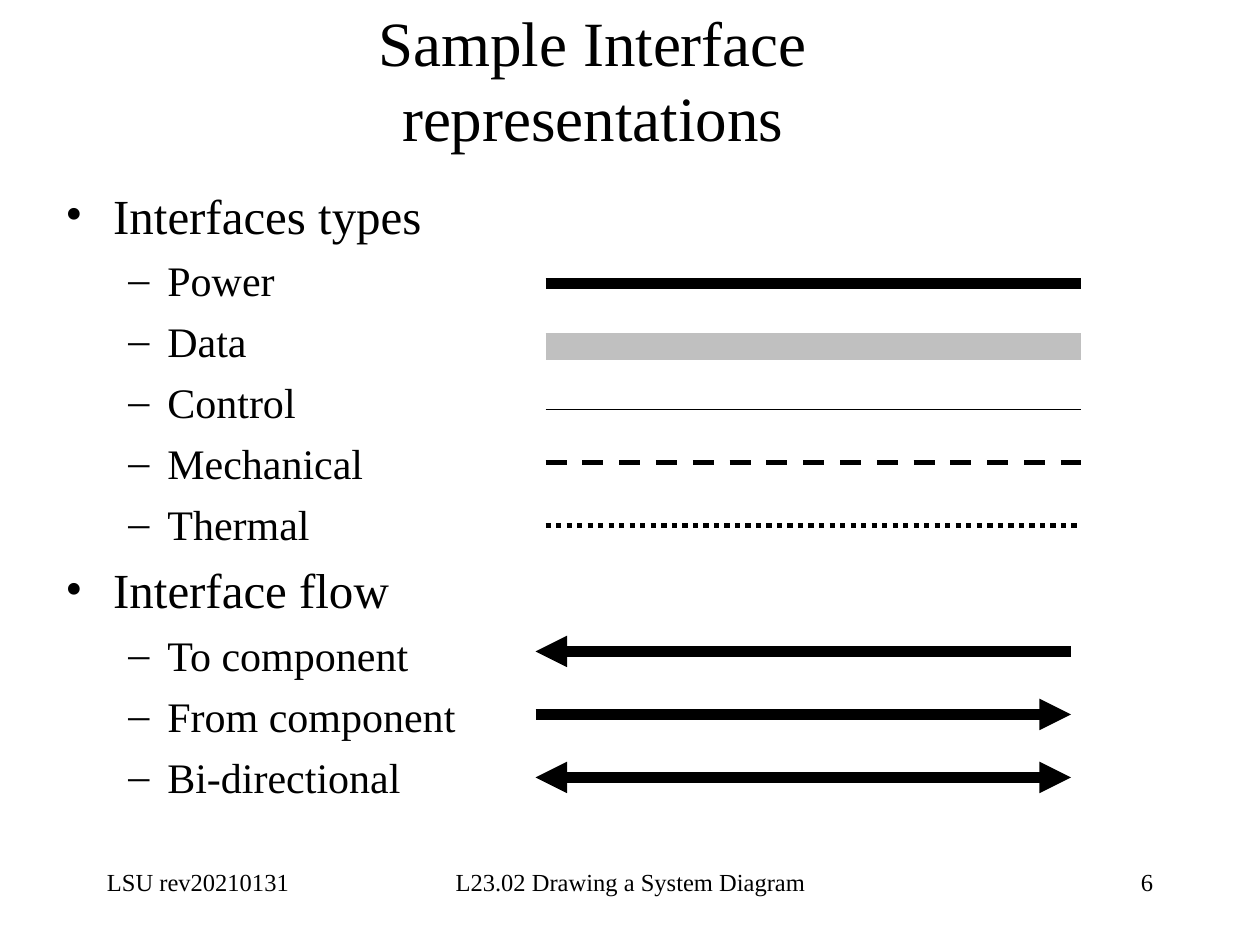
from lxml.etree import SubElement
from pptx import Presentation
from pptx.dml.color import RGBColor
from pptx.enum.dml import MSO_LINE_DASH_STYLE as Dash
from pptx.enum.shapes import MSO_CONNECTOR as Connector
from pptx.enum.text import MSO_ANCHOR as Anchor, PP_ALIGN as Align
from pptx.oxml.ns import qn
from pptx.util import Inches, Pt

FONT = "Times New Roman"
BLACK, GRAY = "000000", "C0C0C0"

TITLE = "Sample Interface representations"
OUTLINE = [
    ("Interfaces types", ["Power", "Data", "Control", "Mechanical", "Thermal"]),
    ("Interface flow", ["To component", "From component", "Bi-directional"]),
]
# bullet, text size, left margin, hanging indent, space before
LEVELS = [("•", 28, 0.38, 0.38, 6.5), ("–", 24, 0.81, 0.31, 6)]
# text, left, width, alignment
FOOTERS = [
    ("LSU rev20210131", 0.75, 2.08, Align.LEFT),
    ("L23.02 Drawing a System Diagram", 3.42, 3.17, Align.CENTER),
    ("6", 7.17, 2.08, Align.RIGHT),
]
LINE_LENGTH = 4.25
TYPE_LEFT, FLOW_LEFT = 4.33, 4.25
# y, colour, width, dash
TYPE_LINES = [
    (2.25, BLACK, 6, None),
    (2.75, GRAY, 16, None),
    (3.25, BLACK, 1, None),
    (3.67, BLACK, 3, Dash.DASH),
    (4.17, BLACK, 3, Dash.ROUND_DOT),
]
# y, arrowhead ends
FLOW_LINES = [
    (5.17, ["headEnd"]),
    (5.67, ["tailEnd"]),
    (6.17, ["headEnd", "tailEnd"]),
]


def color(value):
    return RGBColor.from_string(value)


def style(para, size, align=Align.LEFT):
    para.alignment = align
    for span in para.runs:
        span.font.name = FONT
        span.font.size = Pt(size)
        span.font.color.rgb = color(BLACK)


def add_box(page, left, top, width, height):
    box = page.shapes.add_textbox(*map(Inches, (left, top, width, height)))
    box.text_frame.word_wrap = True
    return box.text_frame


def add_outline(page):
    frame = add_box(page, 0.42, 1.42, 3.75, 5.25)
    items = []
    for heading, entries in OUTLINE:
        items.append((0, heading))
        items.extend((1, entry) for entry in entries)
    for index, (level, text) in enumerate(items):
        bullet, size, margin, hanging, before = LEVELS[level]
        para = frame.add_paragraph() if index else frame.paragraphs[0]
        para.text = text
        para.level = level
        if index:
            para.space_before = Pt(before)
        props = para._p.get_or_add_pPr()
        props.set("marL", str(Inches(margin)))
        props.set("indent", str(-Inches(hanging)))
        SubElement(props, qn("a:buFont"), typeface=FONT)
        SubElement(props, qn("a:buChar"), char=bullet)
        style(para, size)


def add_line(page, left, y, line_color, width, dash=None, heads=()):
    line = page.shapes.add_connector(
        Connector.STRAIGHT, Inches(left), Inches(y), Inches(left + LINE_LENGTH), Inches(y)
    )
    line.line.color.rgb = color(line_color)
    line.line.width = Pt(width)
    if dash:
        line.line.dash_style = dash
    for end in heads:
        SubElement(line.line._get_or_add_ln(), qn(f"a:{end}"), type="triangle")
    SubElement(line._element.spPr, qn("a:effectLst"))


def main():
    deck = Presentation()
    deck.slide_width, deck.slide_height = Inches(10), Inches(7.5)
    page = deck.slides.add_slide(deck.slide_layouts[6])

    for text, left, width, align in FOOTERS:
        frame = add_box(page, left, 6.83, width, 0.5)
        frame.text = text
        style(frame.paragraphs[0], 14, align)

    title = add_box(page, 1.33, 0.29, 6.75, 0.67)
    title.margin_left = title.margin_right = Inches(0.2)
    title.vertical_anchor = Anchor.MIDDLE
    title.text = TITLE
    style(title.paragraphs[0], 36, Align.CENTER)

    add_outline(page)
    for y, line_color, width, dash in TYPE_LINES:
        add_line(page, TYPE_LEFT, y, line_color, width, dash)
    for y, heads in FLOW_LINES:
        add_line(page, FLOW_LEFT, y, BLACK, 6, heads=heads)

    deck.save("out.pptx")


if __name__ == "__main__":
    main()
